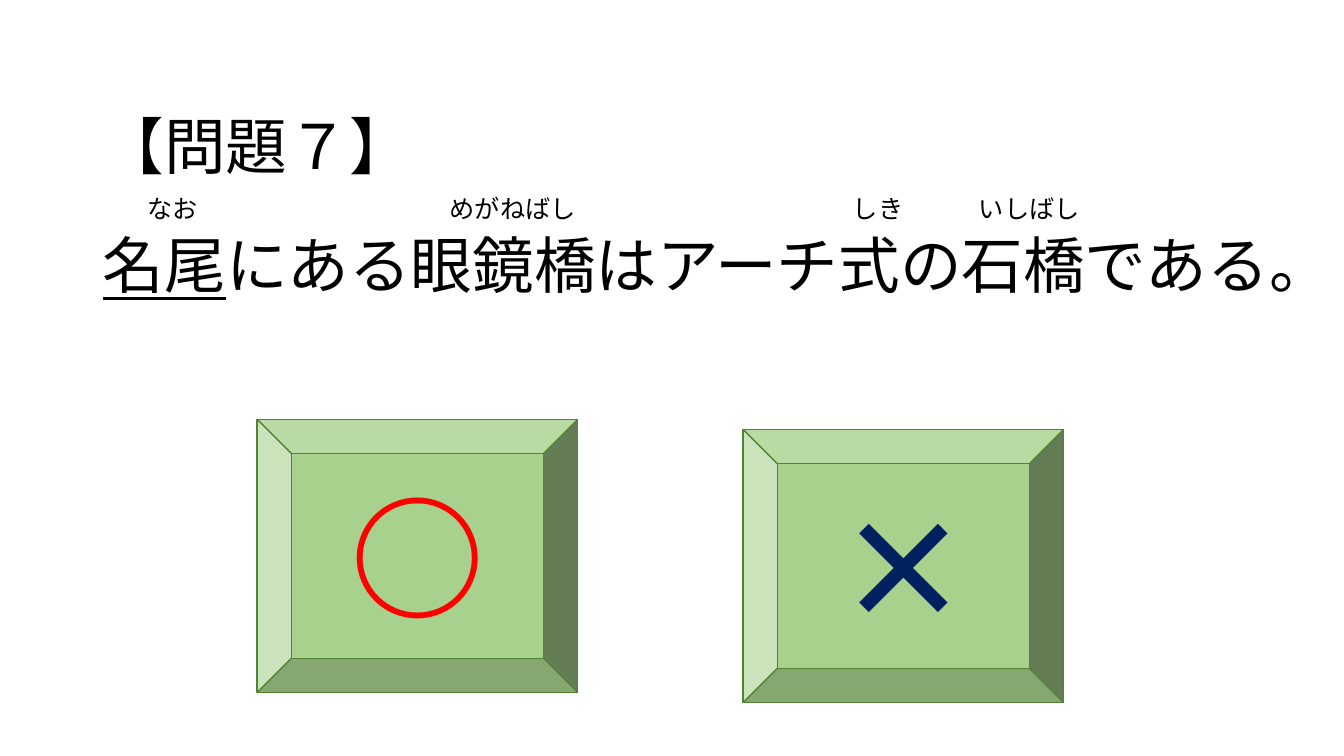
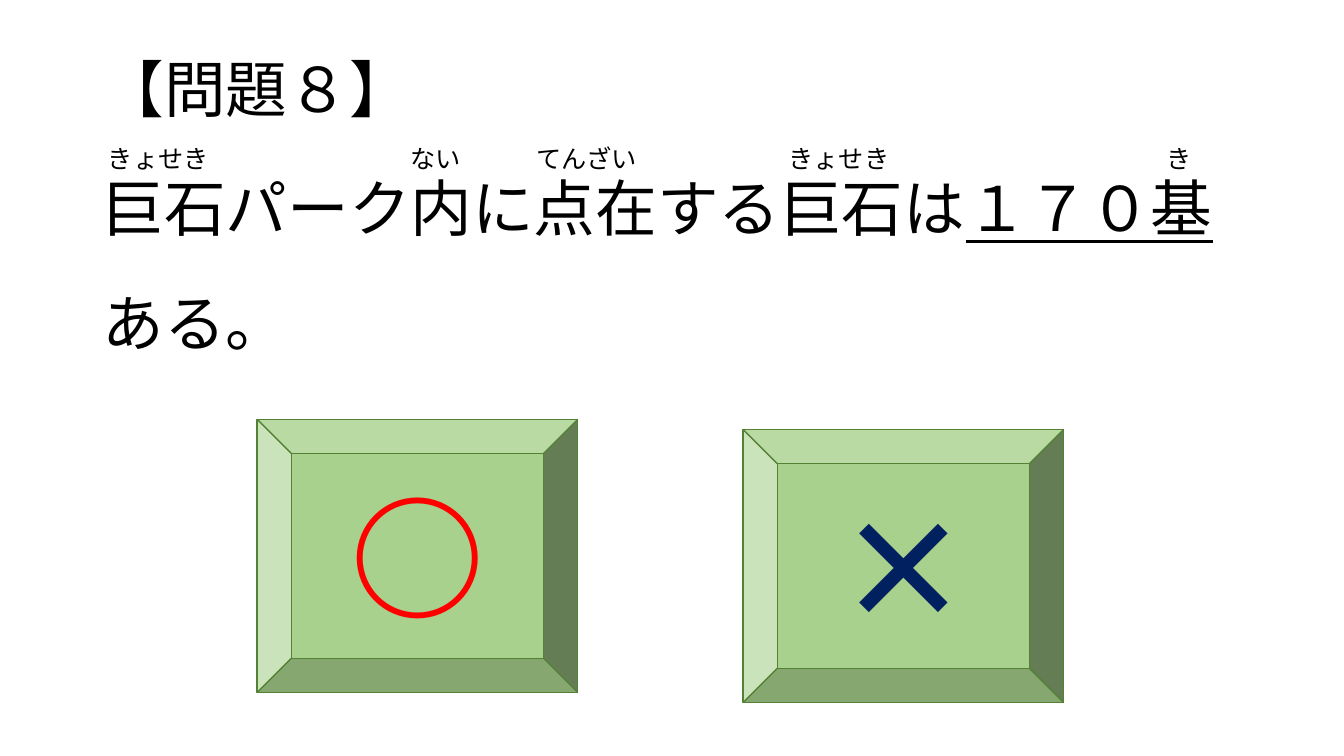
from pptx import Presentation
from pptx import util as u
from pptx.dml.color import RGBColor
from pptx.enum import lang, shapes, text
from pptx.oxml.ns import qn

FONT = "Noto Sans CJK JP"
COLORS = {"text": "000000", "key": "A9D18E", "edge": "548235",
          "yes": "FF0000", "no": "002060"}
CELL = 0.25  # width of one 18 pt kana, in inches

# Each line holds (space before in points, [(words, underlined), ...]);
# each reading holds (cells from the left edge, kana).
SLIDES = [
    {"width": 11.98,
     "lines": [(0, [("【問題７】", False)]),
               (38, [("名尾", True),
                     ("にある眼鏡橋はアーチ式の石橋である。", False)])],
     "kana": (0.96, 1.87, [(2, "なお"), (14, "めがねばし"),
                           (30, "しき"), (35, "いしばし")])},
    {"width": 11.5,
     "lines": [(0, [("【問題８】", False)]),
               (38, [("巨石パーク内に点在する巨石は", False),
                     ("１７０基", True)]),
               (34, [("ある。", False)])],
     "kana": (0.82, 1.37, [(1, "きょせき"), (13, "ない"), (18, "てんざい"),
                           (28, "きょせき"), (43, "き")])},
]

# Answer keys: left, top, mark, colour
KEYS = [(2.55, 4.16, "○", "yes"), (7.37, 4.26, "×", "no")]


def color(name):
    return RGBColor.from_string(COLORS[name])


def add_run(para, words, size, tone="text", bold=False, under=False):
    run = para.add_run()
    run.text = words
    font = run.font
    font.size, font.bold, font.underline = u.Pt(size), bold, under
    font.name = FONT
    font.language_id = lang.MSO_LANGUAGE_ID.JAPANESE
    font.color.rgb = color(tone)
    # East Asian typeface follows the Latin one
    east = font._element.makeelement(qn("a:ea"), {"typeface": FONT})
    font._element.find(qn("a:latin")).addnext(east)


def add_box(slide, left, top, width, height):
    box = slide.shapes.add_textbox(*map(u.Inches, (left, top, width, height)))
    return box.text_frame


def add_title(slide, width, lines):
    frame = add_box(slide, 0.92, 0.4, width, 3.35)
    frame.word_wrap = True
    frame.vertical_anchor = text.MSO_ANCHOR.MIDDLE
    for i, (gap, runs) in enumerate(lines):
        para = frame.add_paragraph() if i else frame.paragraphs[0]
        para.line_spacing = 0.9
        para.space_before = u.Pt(gap)
        for words, under in runs:
            add_run(para, words, 44, under=under)


def add_kana(slide, left, top, words):
    # Readings sit on a grid of kana-wide cells
    for cell, kana in words:
        frame = add_box(slide, left + cell * CELL, top,
                        len(kana) * CELL, 0.4)
        frame.margin_left = frame.margin_right = 0
        frame.word_wrap = False
        add_run(frame.paragraphs[0], kana, 18)


def add_key(slide, left, top, mark, tone):
    key = slide.shapes.add_shape(
        shapes.MSO_SHAPE.BEVEL, *map(u.Inches, (left, top, 3.18, 2.71)))
    key.shadow.inherit = False
    key.fill.solid()
    key.fill.fore_color.rgb = color("key")
    key.line.color.rgb = color("edge")
    key.line.width = u.Pt(1)
    key.text_frame.vertical_anchor = text.MSO_ANCHOR.MIDDLE
    para = key.text_frame.paragraphs[0]
    para.alignment = text.PP_ALIGN.CENTER
    add_run(para, mark, 96, tone, bold=True)


def main():
    deck = Presentation()
    deck.slide_width, deck.slide_height = u.Inches(13.33), u.Inches(7.5)
    for quiz in SLIDES:
        slide = deck.slides.add_slide(deck.slide_layouts[6])
        add_title(slide, quiz["width"], quiz["lines"])
        for key in KEYS:
            add_key(slide, *key)
        add_kana(slide, *quiz["kana"])
    deck.save("out.pptx")


if __name__ == "__main__":
    main()
